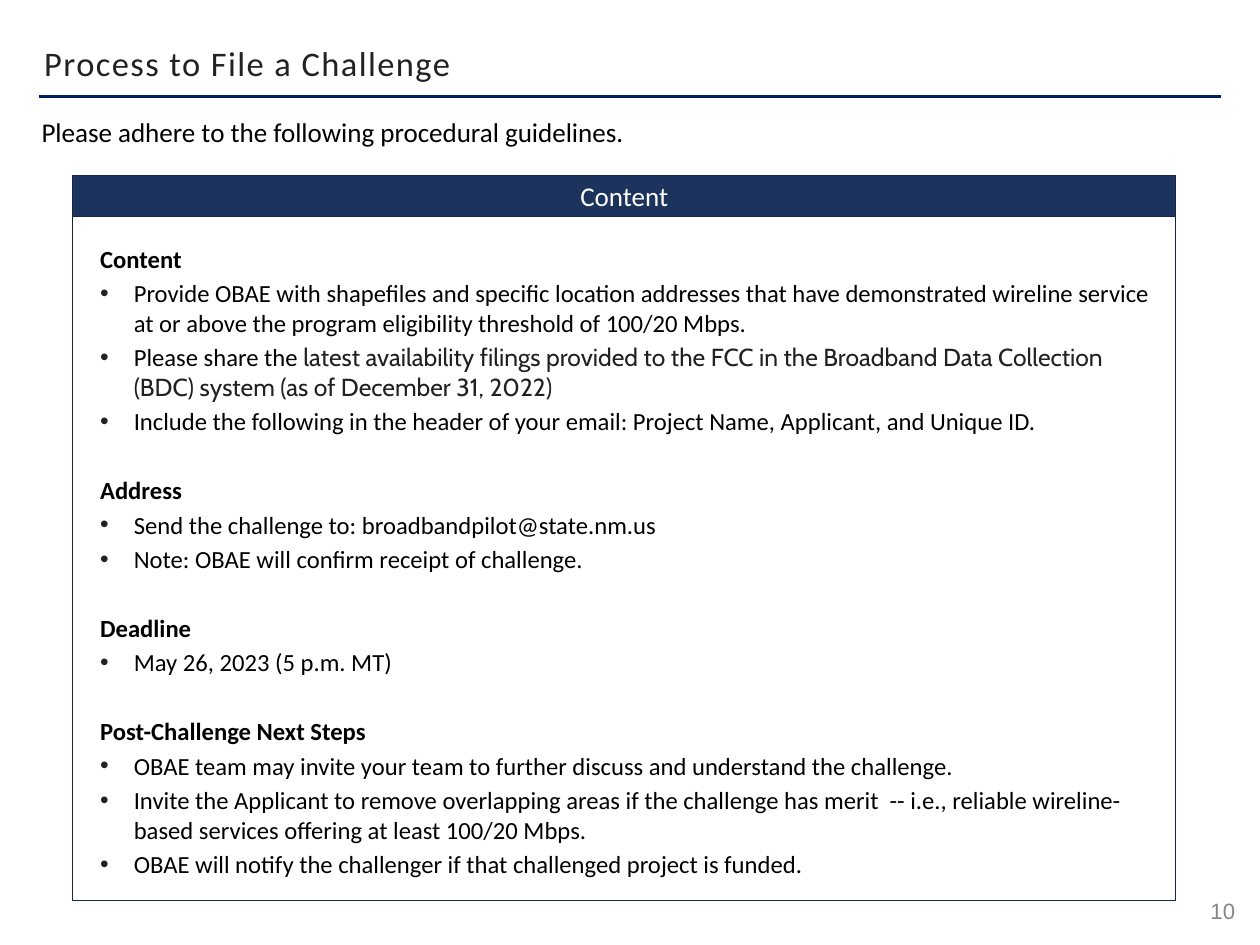
from dataclasses import dataclass

from lxml.etree import SubElement
from pptx import Presentation
from pptx.dml.color import RGBColor
from pptx.enum.shapes import MSO_CONNECTOR, MSO_SHAPE
from pptx.enum.text import MSO_ANCHOR, PP_ALIGN
from pptx.oxml.ns import qn
from pptx.util import Inches, Pt


@dataclass(frozen=True)
class Theme:
    font: str = "Calibri"
    quote_font: str = "Cabin"
    number_font: str = "Arial"
    ink: str = "000000"
    title_ink: str = "222222"
    quote_ink: str = "202124"
    number_ink: str = "838787"
    white: str = "FFFFFF"
    rule: str = "002060"
    banner: str = "1C335E"
    border: str = "152646"
    title_size: int = 28
    lead_size: int = 22
    body_size: int = 20
    number_size: int = 18


THEME = Theme()
WIDTH, HEIGHT = Inches(14.22), Inches(10.67)
MARGIN = 3.09
RULE_TOP = 10.22
PANEL_LEFT, PANEL_WIDTH = 5.77, 87.55
BANNER_TOP, BANNER_HEIGHT = 18.56, 4.4
BODY_HEIGHT = 72.35
TIGHT = (0.06, 0.06, 0.06, 0.06)
TEXT_INDENT, BULLET_INDENT, HANGING = 0.11, 0.49, -0.38
ITEM_GAP, SECTION_GAP = 2, 30

# An item is a list of spans; each span is its text and whether it is quoted.
SECTIONS = [
    ("Content", [
        [("Provide OBAE with shapefiles and specific location addresses that have demonstrated "
          "wireline service at or above the program eligibility threshold of 100/20 Mbps.", False)],
        [("Please share the ", False),
         ("latest availability filings provided to the FCC in the Broadband Data Collection "
          "(BDC) system (as of December 31, 2022)", True)],
        [("Include the following in the header of your email: Project Name, Applicant, "
          "and Unique ID.", False)],
    ]),
    ("Address", [
        [("Send the challenge to: broadbandpilot@state.nm.us", False)],
        [("Note: OBAE will confirm receipt of challenge.", False)],
    ]),
    ("Deadline", [
        [("May 26, 2023 (5 p.m. MT)", False)],
    ]),
    ("Post-Challenge Next Steps", [
        [("OBAE team may invite your team to further discuss and understand the challenge.", False)],
        [("Invite the Applicant to remove overlapping areas if the challenge has merit  -- i.e., "
          "reliable wireline-based services offering at least 100/20 Mbps.", False)],
        [("OBAE will notify the challenger if that challenged project is funded.", False)],
    ]),
]


def color(code):
    return RGBColor.from_string(code)


def place(left, top, width, height):
    """Turn percentages of the slide's size into lengths."""
    return [round(share * side / 100)
            for share, side in zip((left, top, width, height), (WIDTH, HEIGHT) * 2)]


def style_span(span, size, ink, font=THEME.font, bold=False):
    span.font.size = Pt(size)
    span.font.name = font
    span.font.bold = bold
    span.font.color.rgb = color(ink)


def set_insets(frame, insets):
    (frame.margin_left, frame.margin_top,
     frame.margin_right, frame.margin_bottom) = map(Inches, insets)


def set_spacing(para, before, after):
    para.space_before, para.space_after = Pt(before), Pt(after)


def set_indent(para, left, first=0):
    properties = para._p.get_or_add_pPr()
    properties.set("marL", str(Inches(left)))
    properties.set("indent", str(Inches(first)))


def add_bullet(para):
    properties = para._p.get_or_add_pPr()
    SubElement(SubElement(properties, qn("a:buClr")), qn("a:srgbClr"), val=THEME.title_ink)
    SubElement(properties, qn("a:buFont"), typeface="Arial")
    SubElement(properties, qn("a:buChar"), char="•")


def add_label(page, area, text, size, ink, font=THEME.font, wrap=True):
    """Add a one-paragraph text box and return its frame and paragraph."""
    frame = page.shapes.add_textbox(*place(*area)).text_frame
    frame.word_wrap = wrap
    frame.text = text
    para = frame.paragraphs[0]
    style_span(para.runs[0], size, ink, font)
    return frame, para


def add_title(page, text):
    area = (MARGIN, 4.69, 100 - 2 * MARGIN, 4.69)
    frame, para = add_label(page, area, text, THEME.title_size, THEME.title_ink)
    set_insets(frame, TIGHT)
    frame.vertical_anchor = MSO_ANCHOR.BOTTOM
    para.line_spacing = 0.8
    para.runs[0].font._element.set("spc", "120")


def add_rule(page):
    left, top, right, bottom = place(MARGIN, RULE_TOP, 100 - MARGIN, RULE_TOP)
    rule = page.shapes.add_connector(MSO_CONNECTOR.STRAIGHT, left, top, right, bottom)
    rule.line.color.rgb = color(THEME.rule)
    rule.line.width = Pt(2)
    SubElement(rule._element.spPr, qn("a:effectLst"))


def add_lead(page, text):
    frame, para = add_label(page, (1.83, 11.81, 94.8, 4.4), text, THEME.lead_size, THEME.ink)
    set_indent(para, TEXT_INDENT)
    set_spacing(para, 4, 4)


def add_page_number(page, number):
    frame, para = add_label(page, (95.5, 94.94, 2.95, 3.28), number, THEME.number_size,
                            THEME.number_ink, THEME.number_font, wrap=False)
    set_insets(frame, TIGHT)
    para.alignment = PP_ALIGN.RIGHT
    para.line_spacing = 0.8


def add_panel(page, top, height, line_width, fill=None):
    panel = page.shapes.add_shape(MSO_SHAPE.RECTANGLE,
                                  *place(PANEL_LEFT, top, PANEL_WIDTH, height))
    panel.shadow.inherit = False
    if fill:
        panel.fill.solid()
        panel.fill.fore_color.rgb = color(fill)
    else:
        panel.fill.background()
    panel.line.color.rgb = color(THEME.border)
    panel.line.width = Pt(line_width)
    panel.text_frame.word_wrap = True
    return panel.text_frame


def add_banner(page, text):
    frame = add_panel(page, BANNER_TOP, BANNER_HEIGHT, 1, THEME.banner)
    frame.vertical_anchor = MSO_ANCHOR.MIDDLE
    frame.text = text
    para = frame.paragraphs[0]
    para.alignment = PP_ALIGN.CENTER
    style_span(para.runs[0], THEME.lead_size, THEME.white)


def write_heading(para, text, gap):
    para.text = text
    para.alignment = PP_ALIGN.LEFT
    set_indent(para, TEXT_INDENT)
    set_spacing(para, gap, ITEM_GAP)
    style_span(para.runs[0], THEME.body_size, THEME.ink, bold=True)


def write_item(para, spans):
    para.alignment = PP_ALIGN.LEFT
    set_indent(para, BULLET_INDENT, HANGING)
    set_spacing(para, ITEM_GAP, ITEM_GAP)
    add_bullet(para)
    for text, quoted in spans:
        span = para.add_run()
        span.text = text
        ink, font = (THEME.quote_ink, THEME.quote_font) if quoted else (THEME.ink, THEME.font)
        style_span(span, THEME.body_size, ink, font)


def add_sections(page, sections):
    frame = add_panel(page, BANNER_TOP + BANNER_HEIGHT, BODY_HEIGHT, 0.75)
    frame.vertical_anchor = MSO_ANCHOR.TOP
    set_insets(frame, (0.2, 0.3, 0.2, 0.2))
    for index, (heading, items) in enumerate(sections):
        para = frame.add_paragraph() if index else frame.paragraphs[0]
        write_heading(para, heading, SECTION_GAP if index else ITEM_GAP)
        for spans in items:
            write_item(frame.add_paragraph(), spans)


def main():
    deck = Presentation()
    deck.slide_width, deck.slide_height = WIDTH, HEIGHT
    page = deck.slides.add_slide(deck.slide_layouts[6])
    add_rule(page)
    add_title(page, "Process to File a Challenge")
    add_page_number(page, "10")
    add_lead(page, "Please adhere to the following procedural guidelines.")
    add_banner(page, "Content")
    add_sections(page, SECTIONS)
    deck.save("out.pptx")


if __name__ == "__main__":
    main()
